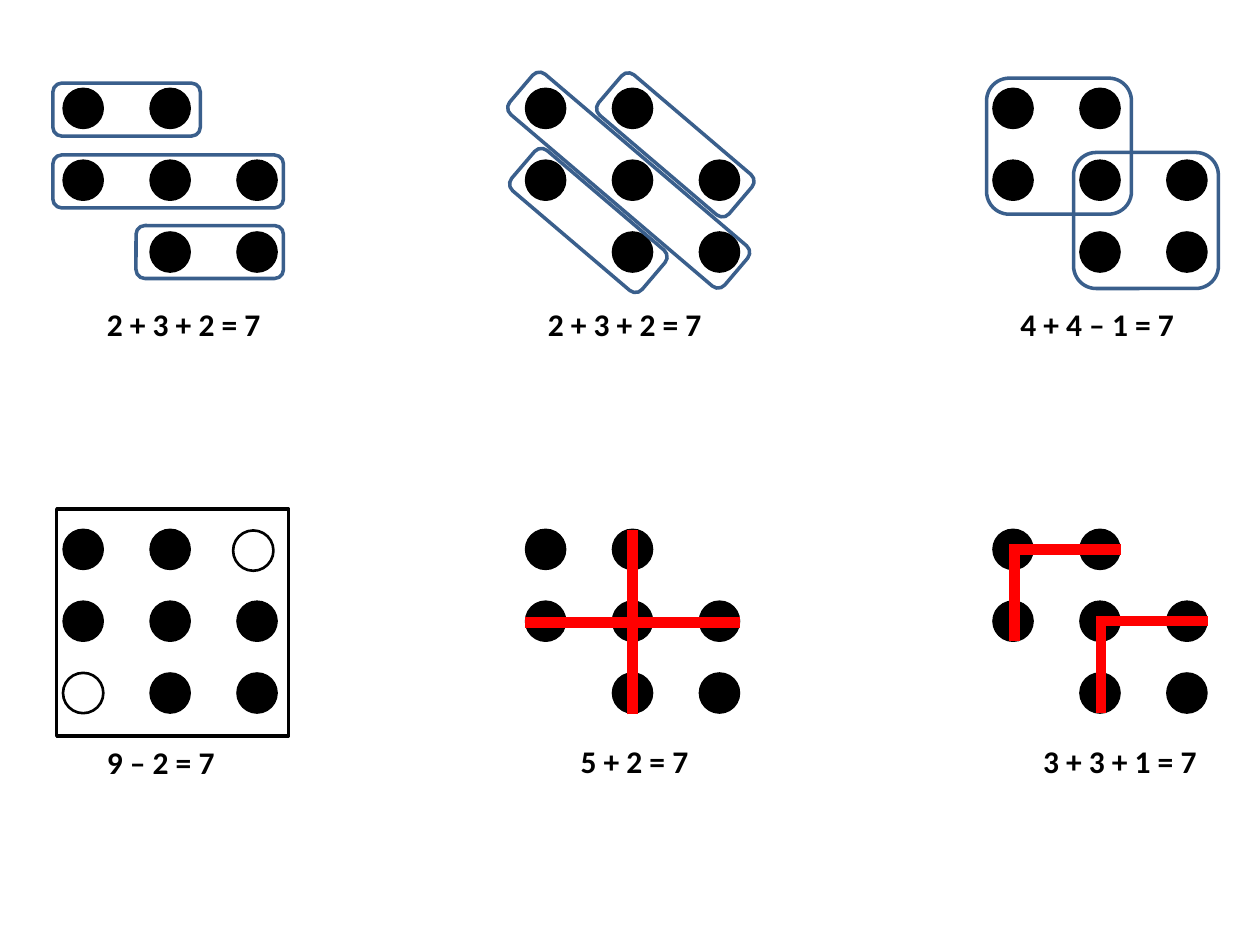
"""Draw six ways of counting seven dots."""
from dataclasses import dataclass
from typing import NamedTuple

from lxml import etree
from pptx import Presentation
from pptx.dml.color import RGBColor
from pptx.enum import shapes, text
from pptx.oxml import ns
from pptx.util import Inches, Pt


@dataclass(frozen=True)
class Theme:
    """Hold the colours, font, sizes and line widths."""
    ink: RGBColor = RGBColor(0, 0, 0)
    loop: RGBColor = RGBColor(0x3A, 0x5F, 0x8C)
    mark: RGBColor = RGBColor(0xFF, 0, 0)
    font: str = "Calibri"
    size: float = 18
    thin: float = 0.75
    ring: float = 1.5
    edge: float = 2
    bar: float = 6


class Box(NamedTuple):
    """Place a shape in inches, turned by an angle."""
    left: float
    top: float
    width: float
    height: float
    turn: float = 0


class Line(NamedTuple):
    """Join two points in inches."""
    x1: float
    y1: float
    x2: float
    y2: float


class Label(NamedTuple):
    """Pair a sum with its box."""
    words: str
    box: Box


KIND = shapes.MSO_SHAPE
LOOK = Theme()
DOT, COL, ROW = 0.32, 0.69, 0.57
LEFTS, TOPS = (0.5, 4.17, 7.88), (0.7, 4.2)
CELLS = ((0, 0), (1, 0), (0, 1), (1, 1), (2, 1), (1, 2), (2, 2))
FRAME = Box(0.45, 4.04, 1.84, 1.8)
LOOPS = (
    Box(0.42, 0.66, 1.17, 0.42),
    Box(0.42, 1.23, 1.83, 0.42),
    Box(1.08, 1.79, 1.17, 0.42),
    Box(4.68, 0.94, 1.36, 0.42, 40.4),
    Box(3.87, 1.22, 2.24, 0.42, 40.4),
    Box(3.99, 1.54, 1.36, 0.42, 40.4),
    Box(7.83, 0.62, 1.15, 1.08),
    Box(8.52, 1.21, 1.15, 1.08),
)
RINGS = (Box(1.85, 4.21, DOT, DOT), Box(0.5, 5.34, DOT, DOT))
CROSS = (Line(4.17, 4.94, 5.87, 4.94), Line(5.02, 5.67, 5.02, 4.21))
HOOKS = ((8.05, 4.36), (8.74, 4.93))
LABELS = (
    Label("2 + 3 + 2 = 7", Box(0.75, 2.37, 1.44, 0.4)),
    Label("2 + 3 + 2 = 7", Box(4.25, 2.37, 1.44, 0.4)),
    Label("4 + 4 – 1 = 7", Box(8, 2.37, 1.44, 0.4)),
    Label("9 – 2 = 7", Box(0.75, 5.85, 1.07, 0.4)),
    Label("5 + 2 = 7", Box(4.51, 5.84, 1.07, 0.4)),
    Label("3 + 3 + 1 = 7", Box(8.18, 5.84, 1.44, 0.4)),
)


def draw(host, kind: KIND, box: Box, tint: RGBColor, width: float,
         solid: bool = False) -> None:
    """Add an outlined shape, filled when solid."""
    item = host.add_shape(kind, *map(Inches, box[:4]))
    item.rotation = box.turn
    item.shadow.inherit = False
    if solid:
        item.fill.solid()
        item.fill.fore_color.rgb = tint
    else:
        item.fill.background()
    item.line.color.rgb = tint
    item.line.width = Pt(width)


def dots(host, left: float, top: float) -> None:
    """Group seven dots on a three by three grid."""
    group = host.add_group_shape().shapes
    for col, row in CELLS:
        box = Box(left + col * COL, top + row * ROW, DOT, DOT)
        draw(group, KIND.OVAL, box, LOOK.ink, LOOK.thin, True)


def rule(host, line: Line) -> None:
    """Add a thick straight line."""
    item = host.add_connector(shapes.MSO_CONNECTOR.STRAIGHT,
                              *map(Inches, line))
    item.line.color.rgb = LOOK.mark
    item.line.width = Pt(LOOK.bar)
    props = item.element.find(ns.qn("p:spPr"))
    etree.SubElement(props, ns.qn("a:effectLst"))


def hook(host, x: float, y: float) -> None:
    """Group two lines that meet at a corner."""
    group = host.add_group_shape().shapes
    rule(group, Line(x + 0.04, y, x + 0.85, y))
    rule(group, Line(x, y + 0.73, x, y - 0.04))


def write(host, label: Label) -> None:
    """Add a bold sum."""
    frame = host.add_textbox(*map(Inches, label.box[:4])).text_frame
    frame.word_wrap = False
    frame.auto_size = text.MSO_AUTO_SIZE.SHAPE_TO_FIT_TEXT
    para = frame.paragraphs[0]
    para.text = label.words
    para.font.name = LOOK.font
    para.font.size = Pt(LOOK.size)
    para.font.bold = True
    para.font.color.rgb = LOOK.ink


def main() -> None:
    """Build and save the slide."""
    deck = Presentation()
    deck.slide_width, deck.slide_height = Inches(10), Inches(7.5)
    host = deck.slides.add_slide(deck.slide_layouts[6]).shapes
    draw(host, KIND.RECTANGLE, FRAME, LOOK.ink, LOOK.edge)
    for top in TOPS:
        for left in LEFTS:
            dots(host, left, top)
    for box in LOOPS:
        draw(host, KIND.ROUNDED_RECTANGLE, box, LOOK.loop, LOOK.edge)
    for box in RINGS:
        draw(host, KIND.OVAL, box, LOOK.ink, LOOK.ring)
    for line in CROSS:
        rule(host, line)
    for x, y in HOOKS:
        hook(host, x, y)
    for label in LABELS:
        write(host, label)
    deck.save("out.pptx")


if __name__ == "__main__":
    main()
